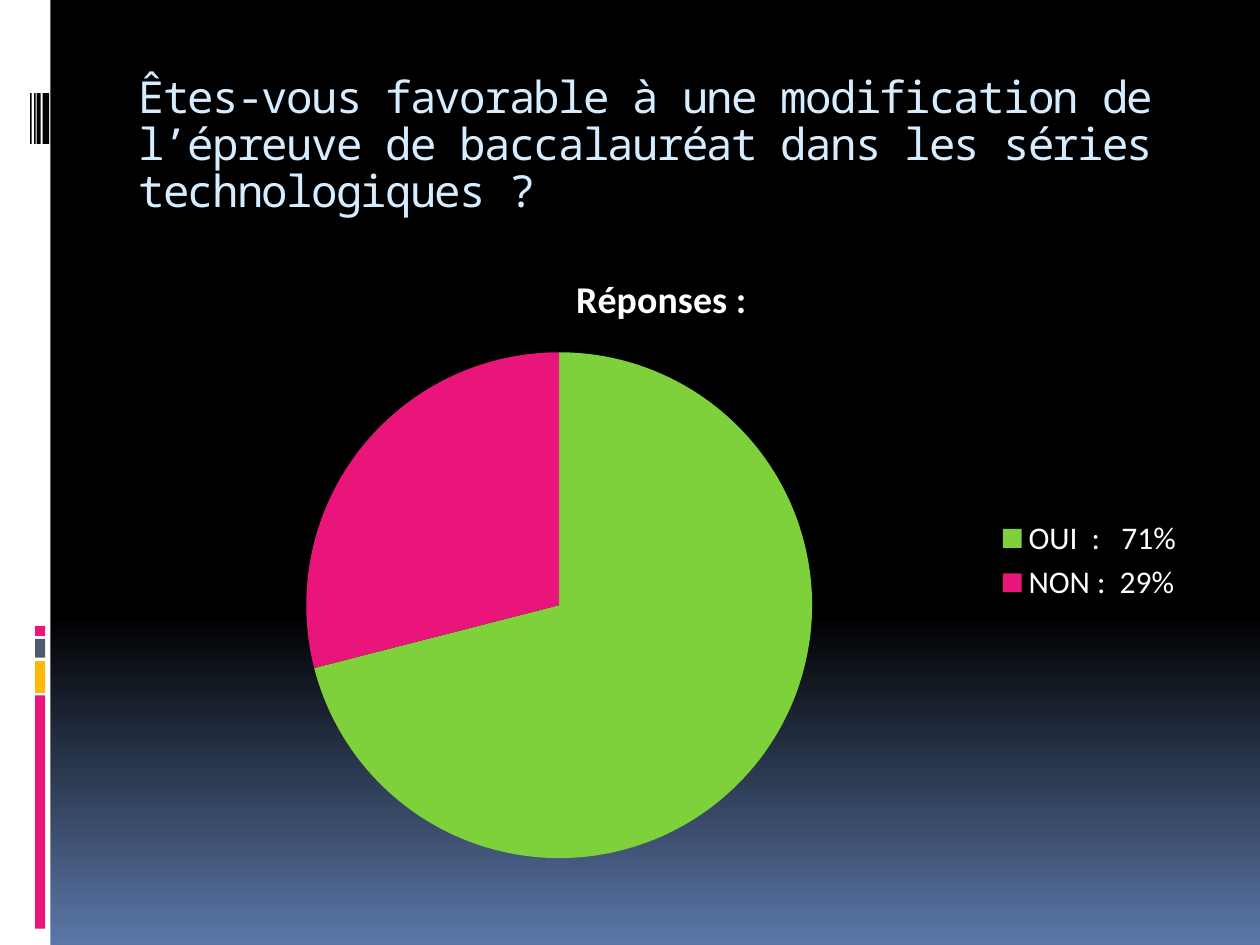
from copy import deepcopy

from pptx import Presentation
from pptx.chart.data import CategoryChartData
from pptx.dml.color import RGBColor
from pptx.enum.chart import XL_CHART_TYPE, XL_LEGEND_POSITION
from pptx.enum.shapes import MSO_SHAPE
from pptx.enum.text import MSO_ANCHOR
from pptx.util import Cm, Pt

RECTANGLE = MSO_SHAPE.RECTANGLE
PIE = XL_CHART_TYPE.PIE
LEGEND_RIGHT = XL_LEGEND_POSITION.RIGHT
ANCHOR_TOP = MSO_ANCHOR.TOP

COLORS = {
    "black": "000000",
    "white": "FFFFFF",
    "sky": "5B77A8",
    "pink": "EA157A",
    "amber": "FEB80A",
    "slate": "4E5B6F",
    "green": "7FD13B",
    "pale_blue": "D6ECFF",
}


class SlideBuilder:
    title_font = "Noto Sans Mono"
    chart_font = "Calibri"

    def __init__(self, slide):
        self.slide = slide

    def color(self, name):
        return RGBColor.from_string(COLORS[name])

    def style_font(self, font, name, size, color, bold=False):
        font.name = name
        font.size = Pt(size)
        font.bold = bold
        font.color.rgb = self.color(color)

    def background(self, stops):
        fill = self.slide.background.fill
        fill.gradient()
        fill.gradient_angle = 270
        first = fill.gradient_stops[0]._gs
        first.addnext(deepcopy(first))
        for stop, (position, color) in zip(fill.gradient_stops, stops):
            stop.position = position
            stop.color.rgb = self.color(color)

    def bar(self, left, top, width, height, color):
        bar = self.slide.shapes.add_shape(
            RECTANGLE, Cm(left), Cm(top), Cm(width), Cm(height))
        bar.shadow.inherit = False
        bar.fill.solid()
        bar.fill.fore_color.rgb = self.color(color)
        bar.line.fill.background()

    def title(self, text, left, top, width, height):
        box = self.slide.shapes.add_textbox(
            Cm(left), Cm(top), Cm(width), Cm(height))
        frame = box.text_frame
        frame.word_wrap = True
        frame.vertical_anchor = ANCHOR_TOP
        frame.text = text
        para = frame.paragraphs[0]
        para.line_spacing = 0.88
        span = para.runs[0]
        self.style_font(span.font, self.title_font, 25.2, "pale_blue")
        span.font._element.set("spc", "-100")

    def pie(self, name, slices, left, top, width, height):
        data = CategoryChartData()
        data.categories = [label for label, value, color in slices]
        data.add_series(name, [value for label, value, color in slices])
        chart = self.slide.shapes.add_chart(
            PIE, Cm(left), Cm(top), Cm(width), Cm(height), data).chart
        self.style_font(chart.font, self.chart_font, 18, "white")
        chart.has_title = True
        title_frame = chart.chart_title.text_frame
        title_frame.text = name
        self.style_font(title_frame.paragraphs[0].runs[0].font,
                        self.chart_font, 21.6, "white", bold=True)
        chart.has_legend = True
        chart.legend.position = LEGEND_RIGHT
        chart.legend.include_in_layout = False
        plot = chart.plots[0]
        plot.vary_by_categories = True
        for index, (label, value, color) in enumerate(slices):
            fill = plot.series[0].points[index].format.fill
            fill.solid()
            fill.fore_color.rgb = self.color(color)


def main():
    deck = Presentation()
    deck.slide_width = Cm(25.4)
    deck.slide_height = Cm(19.05)
    page = SlideBuilder(deck.slides.add_slide(deck.slide_layouts[6]))

    page.background([(0, "black"), (0.65, "black"), (1, "sky")])
    page.bar(0, 0, 1.02, 19.05, "white")
    for top, height, color in [(14.02, 4.7, "pink"), (13.33, 0.64, "amber"),
                               (12.88, 0.38, "slate"), (12.62, 0.2, "pink")]:
        page.bar(0.71, top, 0.2, height, color)
    for left, width in [(0.86, 0.13), (0.74, 0.08), (0.69, 0.03), (0.61, 0.03)]:
        page.bar(left, 1.88, width, 1.02, "black")

    page.title("Êtes-vous favorable à une modification de l’épreuve de "
               "baccalauréat dans les séries technologiques ?",
               2.54, 1.42, 21.59, 2.54)
    page.pie("Réponses :",
             [("OUI  :   71%", 71, "green"), ("NON :  29%", 29, "pink")],
             2.54, 4.95, 21.59, 12.7)

    deck.save("out.pptx")


if __name__ == "__main__":
    main()
